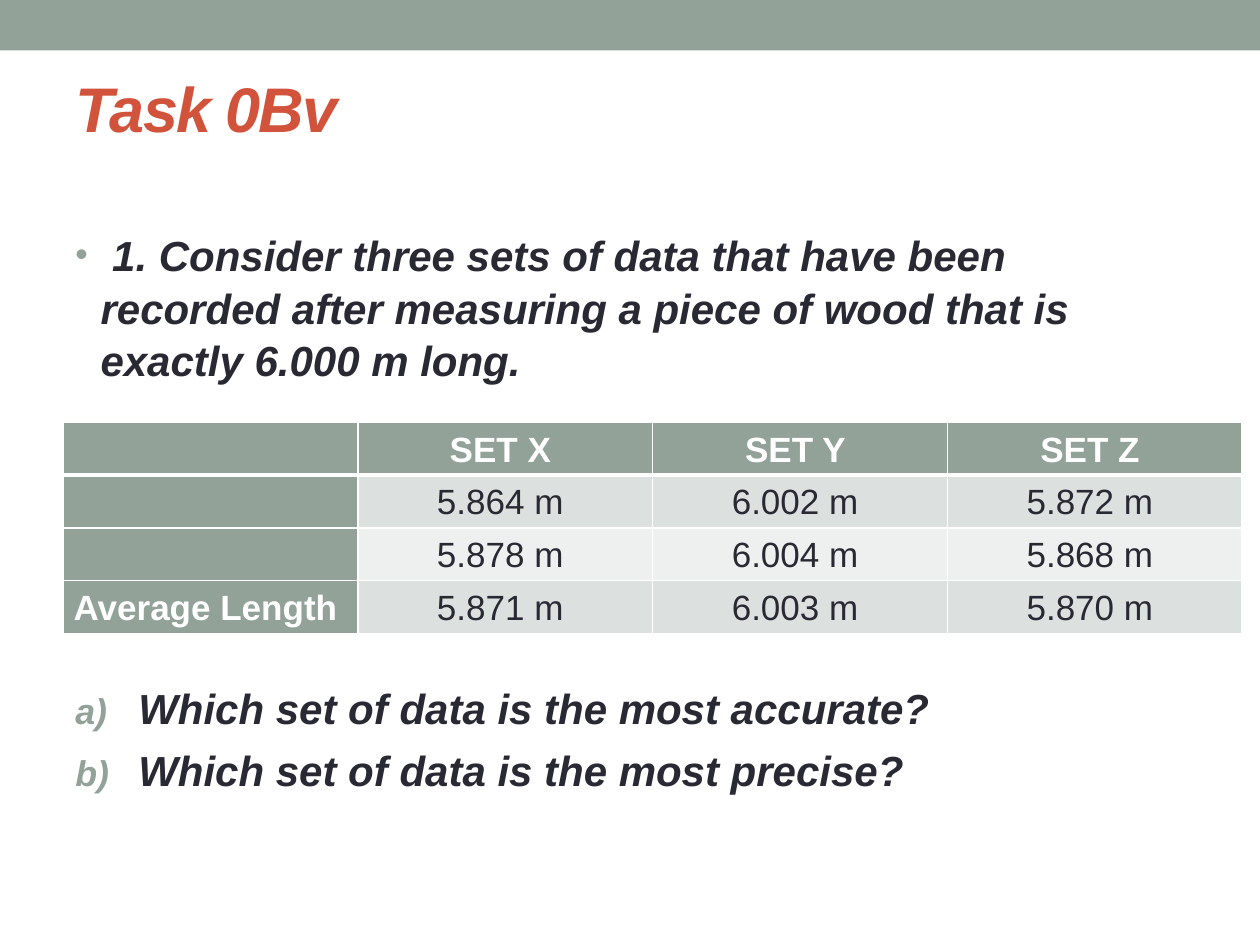
from lxml.etree import SubElement
from pptx import Presentation
from pptx.dml.color import RGBColor
from pptx.enum.shapes import MSO_SHAPE
from pptx.enum.text import MSO_ANCHOR, PP_ALIGN
from pptx.oxml import parse_xml
from pptx.oxml.ns import nsdecls, qn
from pptx.util import Inches, Pt

COLORS = {
    "sage": "93A299",
    "red": "D2533C",
    "ink": "292934",
    "white": "FFFFFF",
    "dark_band": "DCE0DE",
    "light_band": "EEF0EF",
}
FONT = "Arial"
MEASUREMENTS = [
    ["", "SET X ", "SET Y ", "SET Z "],
    ["", "5.864 m ", "6.002 m ", "5.872 m "],
    ["", "5.878 m ", "6.004 m ", "5.868 m "],
    ["Average Length ", "5.871 m ", "6.003 m ", "5.870 m "],
]
INTRO = [
    " 1. Consider three sets of data that have been recorded after "
    "measuring a piece of wood that is exactly 6.000 m long."
]
QUESTIONS = [
    "Which set of data is the most accurate?",
    "Which set of data is the most precise?",
]


def color(name):
    return RGBColor.from_string(COLORS[name])


def set_font(paragraph, size, color_name, bold=False, italic=False):
    font = paragraph.font
    font.name = FONT
    font.size = Pt(size)
    font.bold = bold
    font.italic = italic
    font.color.rgb = color(color_name)


def add_text_box(slide, left, top, width, height):
    box = slide.shapes.add_textbox(Inches(left), Inches(top), Inches(width), Inches(height))
    box.text_frame.word_wrap = True
    return box.text_frame


def add_band(slide, width, height):
    band = slide.shapes.add_shape(MSO_SHAPE.RECTANGLE, 0, 0, Inches(width), Inches(height))
    band.shadow.inherit = False
    band.fill.solid()
    band.fill.fore_color.rgb = color("sage")
    band.line.fill.background()


def add_title(slide, text):
    paragraph = add_text_box(slide, 0.5, 0.5, 9, 0.68).paragraphs[0]
    paragraph.text = text
    set_font(paragraph, 36, "red", bold=True, italic=True)
    paragraph.font._element.set("spc", "-100")


def set_bullet(paragraph, indent, tag, **attributes):
    properties = paragraph._p.get_or_add_pPr()
    properties.set("marL", str(Inches(indent)))
    properties.set("indent", str(-Inches(indent)))
    bullet_color = SubElement(properties, qn("a:buClr"))
    SubElement(bullet_color, qn("a:srgbClr"), val=COLORS["sage"])
    SubElement(properties, qn("a:buSzPct"), val="85000")
    SubElement(properties, qn("a:buFont"), typeface=FONT)
    SubElement(properties, qn(tag), **attributes)


def add_list(slide, top, height, items, indent, tag, **attributes):
    frame = add_text_box(slide, 0.5, top, 9, height)
    for index, item in enumerate(items):
        paragraph = frame.add_paragraph() if index else frame.paragraphs[0]
        paragraph.text = item
        set_bullet(paragraph, indent, tag, **attributes)
        paragraph.line_spacing = 1.05
        paragraph.space_before = Pt(4.8)
        set_font(paragraph, 24, "ink", bold=True, italic=True)


def set_borders(cell, widths):
    properties = cell._tc.get_or_add_tcPr()
    for index, (side, width) in enumerate(widths.items()):
        border = parse_xml(
            f'<a:ln{side} {nsdecls("a")} w="{Pt(width)}"><a:solidFill>'
            f'<a:srgbClr val="{COLORS["white"]}"/></a:solidFill></a:ln{side}>'
        )
        properties.insert(index, border)


def fill_cell(cell, text, row, column):
    is_heading = row == 0 or column == 0
    band = "dark_band" if row % 2 else "light_band"
    cell.fill.solid()
    cell.fill.fore_color.rgb = color("sage" if is_heading else band)
    cell.vertical_anchor = MSO_ANCHOR.MIDDLE
    cell.margin_left = cell.margin_right = Inches(0.08)
    cell.margin_top = cell.margin_bottom = 0
    paragraph = cell.text_frame.paragraphs[0]
    paragraph.text = text
    paragraph.alignment = PP_ALIGN.CENTER
    paragraph.line_spacing = 1.07
    set_font(paragraph, 20, "white" if is_heading else "ink", bold=is_heading)
    set_borders(cell, {"L": 1, "R": 1, "T": 3 if row == 1 else 1, "B": 3 if row == 0 else 1})


def add_measurement_table(slide, rows):
    row_count, column_count = len(rows), len(rows[0])
    table = slide.shapes.add_table(
        row_count, column_count, Inches(0.5), Inches(3.35),
        Inches(2.34 * column_count), Inches(0.42 * row_count),
    ).table
    for row, texts in enumerate(rows):
        for column, text in enumerate(texts):
            fill_cell(table.cell(row, column), text, row, column)


def main():
    presentation = Presentation()
    presentation.slide_width = Inches(10)
    presentation.slide_height = Inches(7.5)
    slide = presentation.slides.add_slide(presentation.slide_layouts[6])
    add_band(slide, 10, 0.4)
    add_title(slide, "Task 0Bv")
    add_list(slide, 1.75, 1.4, INTRO, 0.2, "a:buChar", char="•")
    add_list(slide, 5.35, 1.1, QUESTIONS, 0.5, "a:buAutoNum", type="alphaLcParenR")
    add_measurement_table(slide, MEASUREMENTS)
    presentation.save("out.pptx")


if __name__ == "__main__":
    main()
